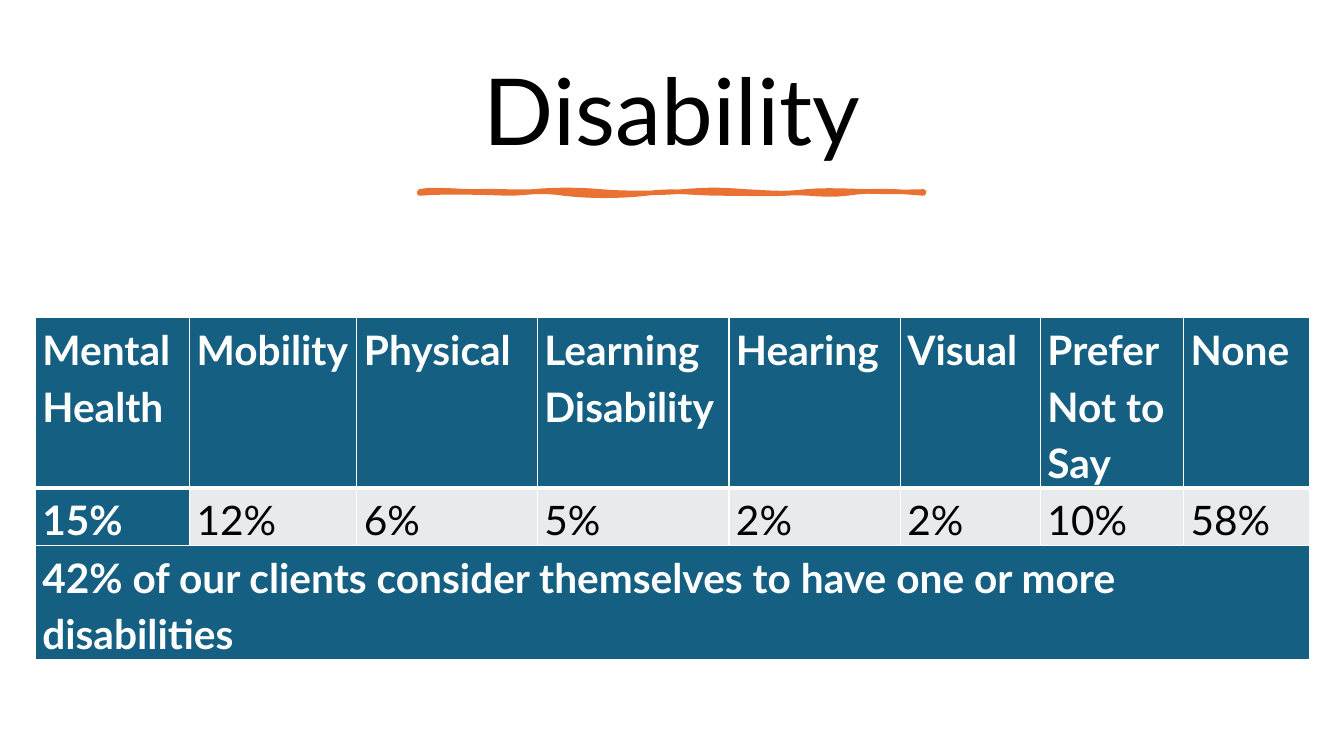
from dataclasses import dataclass

from lxml import etree
from pptx import Presentation
from pptx import util as u
from pptx.dml.color import RGBColor
from pptx.enum import text
from pptx.oxml.ns import qn


@dataclass(frozen=True)
class Theme:
    font: str = "Lato"
    ink: str = "000000"
    white: str = "FFFFFF"
    blue: str = "156082"
    grey: str = "E8EAED"
    orange: str = "E97132"
    title: float = 66
    cell: float = 29
    rule: float = 3.25
    thin: float = 1
    thick: float = 3


THEME = Theme()
WIDE, HIGH = 13.33, 7.5
HEADS = ["Mental Health", "Mobility", "Physical", "Learning Disability",
         "Hearing", "Visual", "Prefer Not to Say", "None"]
RATES = ["15%", "12%", "6%", "5%", "2%", "2%", "10%", "58%"]
NOTE = "42% of our clients consider themselves to have one or more disabilities"
COLS = [1.53, 1.66, 1.79, 1.9, 1.7, 1.39, 1.42, 1.25]
ROWS = [1.69, 0.57, 1.13]

# Curves of the wavy rule, in hundredths of an inch from its top left corner:
# two control points and an end point each.
WAVE = [
    (12, -3, 38, 0, 57, 0), (76, -1, 93, 1, 113, 0),
    (133, -2, 158, -2, 180, 0), (201, 2, 237, 2, 261, 0),
    (286, -2, 298, -2, 323, 0), (347, 1, 358, 3, 384, 0),
    (410, -3, 451, 2, 500, 0), (501, 1, 500, 1, 500, 2),
    (479, 0, 449, -2, 424, 2), (399, 5, 385, 0, 363, 2),
    (340, 3, 331, 2, 301, 2), (271, 2, 251, -2, 225, 2),
    (198, 5, 169, 5, 143, 2), (118, -2, 107, 2, 87, 2),
    (67, 1, 22, 0, 0, 2), (0, 1, 0, 0, 0, 0),
]


def apply(item, form):
    for name, value in form.items():
        setattr(item, name, value)


def style(par, size, color, bold=False):
    apply(par.font, {"name": THEME.font, "size": u.Pt(size), "bold": bold})
    par.font.color.rgb = RGBColor.from_string(color)


def trace(curves, steps=8):
    """Turn a chain of cubic curves from (0, 0) into points."""
    x, y = 0, 0
    for a, b, c, d, e, f in curves:
        for i in range(1, steps + 1):
            t = i / steps
            s = 1 - t
            yield tuple(s**3 * p + 3 * s * s * t * q + 3 * s * t * t * r + t**3 * z
                        for p, q, r, z in ((x, a, c, e), (y, b, d, f)))
        x, y = e, f


def add_title(slide, left, top, width, height):
    title = slide.shapes.title
    apply(title, {"left": u.Inches(left), "top": u.Inches(top),
                  "width": u.Inches(width), "height": u.Inches(height)})
    frame = title.text_frame
    frame.text = "Disability"
    apply(frame, {"vertical_anchor": text.MSO_ANCHOR.MIDDLE, "word_wrap": True})
    par = frame.paragraphs[0]
    apply(par, {"alignment": text.PP_ALIGN.CENTER, "line_spacing": 0.9})
    style(par, THEME.title, THEME.ink)


def add_rule(slide, left, top):
    points = [(u.Inches(left + x / 100), u.Inches(top + y / 100))
              for x, y in trace(WAVE)]
    pen = slide.shapes.build_freeform(u.Inches(left), u.Inches(top))
    pen.add_line_segments(points, close=True)
    rule = pen.convert_to_shape()
    rule.shadow.inherit = False
    for fill in (rule.fill, rule.line.fill):
        fill.solid()
        fill.fore_color.rgb = RGBColor.from_string(THEME.orange)
    rule.line.width = u.Pt(THEME.rule)


def add_edges(cell, widths):
    """Draw white borders, given in points as left, right, top, bottom."""
    props = cell._tc.get_or_add_tcPr()
    for i, (side, width) in enumerate(zip("LRTB", widths)):
        line = etree.Element(qn(f"a:ln{side}"), w=str(u.Pt(width)))
        fill = etree.SubElement(line, qn("a:solidFill"))
        etree.SubElement(fill, qn("a:srgbClr"), val=THEME.white)
        props.insert(i, line)


def fill_cell(cell, words, light, widths):
    if words:
        cell.text = words
    apply(cell, {"margin_left": u.Inches(0.07), "margin_right": u.Inches(0.07),
                 "margin_top": 0, "margin_bottom": 0})
    cell.fill.solid()
    cell.fill.fore_color.rgb = RGBColor.from_string(THEME.grey if light else THEME.blue)
    par = cell.text_frame.paragraphs[0]
    apply(par, {"line_spacing": 1.16, "space_after": u.Pt(8)})
    style(par, THEME.cell, THEME.ink if light else THEME.white, not light)
    add_edges(cell, widths)


def add_rates(slide, left, top):
    box = [u.Inches(v) for v in (left, top, sum(COLS), sum(ROWS))]
    table = slide.shapes.add_table(len(ROWS), len(COLS), *box).table
    for col, width in zip(table.columns, COLS):
        col.width = u.Inches(width)
    for row, height in zip(table.rows, ROWS):
        row.height = u.Inches(height)
    table.cell(2, 0).merge(table.cell(2, len(COLS) - 1))
    thin, thick = THEME.thin, THEME.thick
    edges = [(thin, thin, thin, thick), (thin, thin, thick, thin), (thin,) * 4]
    lines = [HEADS, RATES, [NOTE] + [""] * (len(COLS) - 1)]
    for i, line in enumerate(lines):
        for j, words in enumerate(line):
            fill_cell(table.cell(i, j), words, i == 1 and j > 0, edges[i])


def main():
    deck = Presentation()
    apply(deck, {"slide_width": u.Inches(WIDE), "slide_height": u.Inches(HIGH)})
    slide = deck.slides.add_slide(deck.slide_layouts[5])
    add_title(slide, 0.7, 0.46, 11.93, 1.37)
    add_rule(slide, 4.16, 1.9)
    add_rates(slide, 0.35, 3.15)
    deck.save("out.pptx")


if __name__ == "__main__":
    main()
